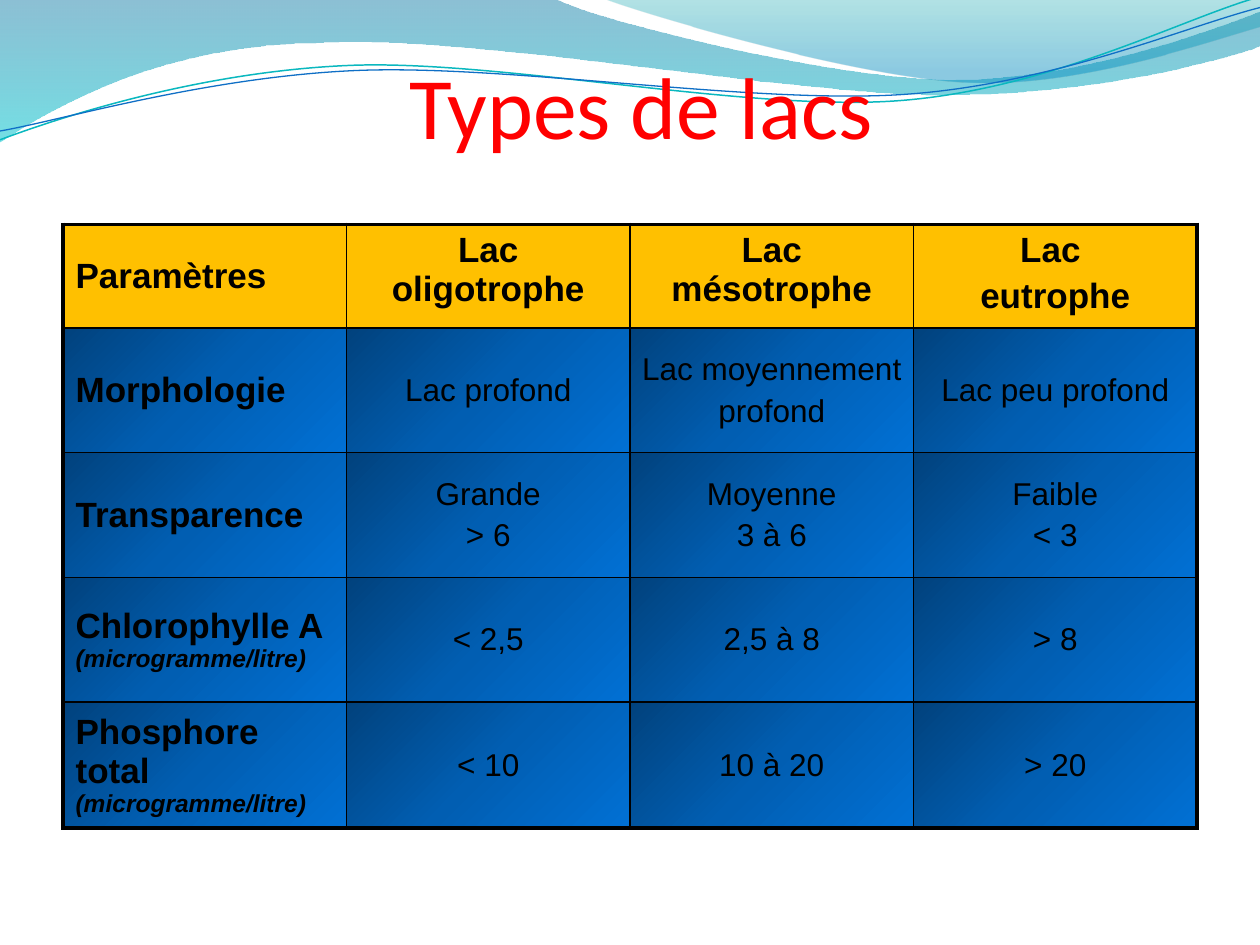
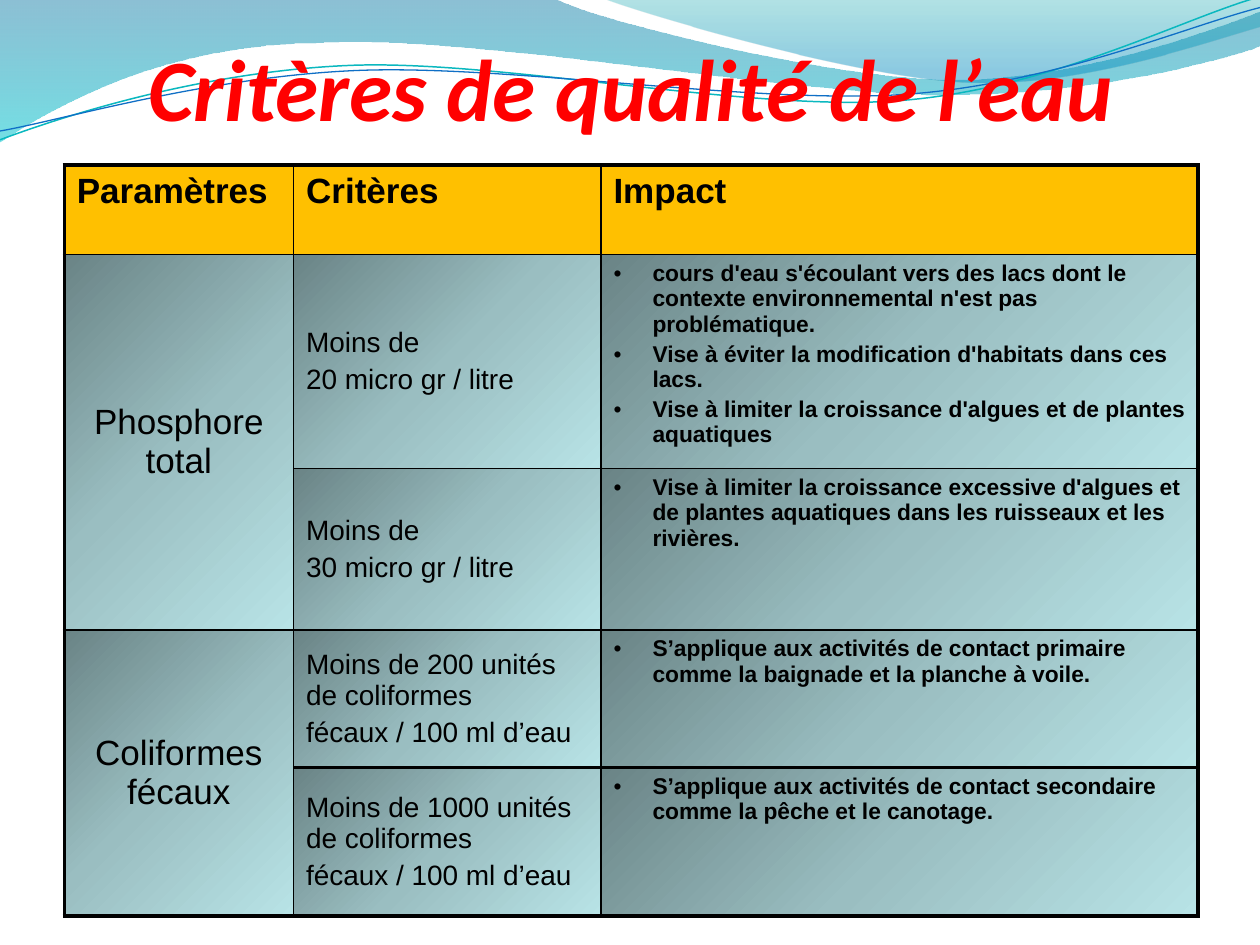
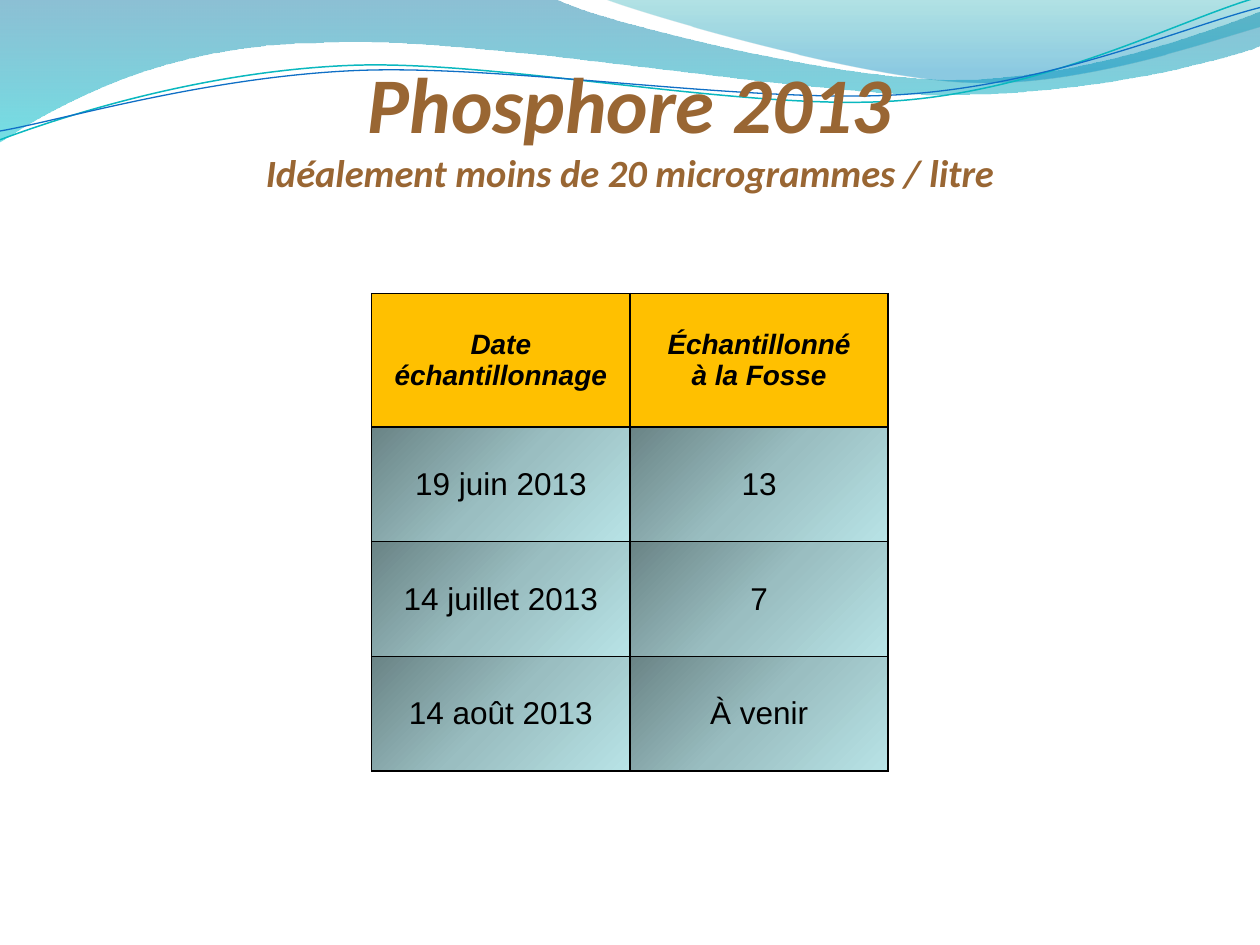
from lxml.etree import SubElement
from pptx import Presentation
from pptx.dml.color import RGBColor
from pptx.enum.text import MSO_ANCHOR, PP_ALIGN
from pptx.oxml.ns import qn
from pptx.util import Inches, Pt

BLACK, RED, BROWN, GOLD = "000000", "FF0000", "996633", "FFC000"
BLUE = [(0, "01427D", 100), (50, "015EB2", 100), (100, "0170D4", 100)]
TEAL = [(0, "6A8486", 100), (50, "9ABEC1", 100), (100, "B8E3E6", 100)]
LEFT, CENTER = PP_ALIGN.LEFT, PP_ALIGN.CENTER
TOP, MIDDLE = MSO_ANCHOR.TOP, MSO_ANCHOR.MIDDLE
THIN, THICK = 1, 2.25
UNIT = "(microgramme/litre)"
GRAIN = 1000


def rgb(color):
    return RGBColor.from_string(color)


def gradient(fill, props, stops, angle):
    fill.gradient()
    grad = props.find(qn("a:gradFill"))
    grad.find(qn("a:lin")).set("ang", str(angle * 60000))
    gs_list = grad.find(qn("a:gsLst"))
    gs_list.clear()
    for pos, color, alpha in stops:
        gs = SubElement(gs_list, qn("a:gs"), pos=str(pos * 1000))
        clr = SubElement(gs, qn("a:srgbClr"), val=color)
        if alpha < 100:
            SubElement(clr, qn("a:alpha"), val=str(alpha * 1000))


bands = [
    ([(0, -0.01), (4.4, -0.01), (4.76, 0.17, 6.64, 0.63, 7.58, 0.63),
      (8.53, 0.63, 9.58, 0.26, 10, 0.09), (10.01, 0.36),
      (9.83, 0.44, 8.7, 0.76, 7.46, 0.75), (6.22, 0.75, 3.82, 0.28, 2.57, 0.34),
      (1.29, 0.35, 0.46, 0.83, -0.01, 1.13)],
     [(0, "0074A1", 45), (100, "00C6CF", 55)], None),
    ([(4.79, -0.01), (5.09, 0.11, 6.82, 0.62, 7.69, 0.65),
      (8.56, 0.69, 9.61, 0.32, 10, 0.21), (10, 0)],
     [(0, "00A1A9", 30), (80, "008BBF", 45)], None),
    ([(0, 1.11), (0.48, 0.93, 1.58, 0.57, 2.77, 0.52),
      (3.95, 0.47, 5.93, 0.89, 7.13, 0.8), (8.33, 0.71, 9.38, 0.15, 9.98, -0.02)],
     None, ("0AB8BF", 0.85)),
    ([(0, 1.04), (0.47, 0.96, 1.64, 0.61, 2.83, 0.56),
      (4.03, 0.51, 5.97, 0.83, 7.17, 0.75), (8.36, 0.67, 9.41, 0.21, 10, 0.06)],
     None, ("0F6FC6", 0.75)),
]

lake_head = (20, True, False, CENTER, TOP, 0.1)
lake_label = (20, True, False, LEFT, MIDDLE, 0.1)
lake_value = (18, False, False, CENTER, MIDDLE, 0)
criteria_head = (20, True, False, LEFT, TOP, 0.1)
sample_head = (16, True, True, CENTER, MIDDLE, 0.1)
sample_value = (18, False, False, CENTER, MIDDLE, 0.1)

pages = [
    dict(
        title="Types de lacs", title_at=(0.59, 0, 9, 1.25), title_color=RED,
        title_sizes=[50], title_bold=False,
        at=(0.5, 1.78), cols=[2.25] * 4, rows=[0.47] + [0.99] * 4,
        head=[lake_label] + [lake_head] * 3, body=[lake_label] + [lake_value] * 3,
        fill=BLUE, edge=THICK, gap=0.2, merges=[], units=[3, 4], bullets=None, rule=None,
        cells=[
            ["Paramètres", "Lac oligotrophe", "Lac mésotrophe", "Lac \neutrophe"],
            ["Morphologie", "Lac profond", "Lac moyennement\nprofond", "Lac peu profond"],
            ["Transparence", "Grande\n> 6", "Moyenne\n3 à 6", "Faible\n< 3"],
            ["Chlorophylle A ", "< 2,5", "2,5 à 8", "> 8"],
            ["Phosphore total ", "< 10", "10 à 20", "> 20"],
        ]),
    dict(
        title="Critères de qualité de l’eau", title_at=(0.51, 0, 9, 1.1), title_color=RED,
        title_sizes=[50], title_bold=True,
        at=(0.51, 1.31), cols=[1.82, 2.44, 4.74], rows=[0.71, 1.7, 1.28, 1.09, 1.18],
        head=[criteria_head] * 3,
        body=[(20, False, False, CENTER, MIDDLE, 0.1), (16, False, False, LEFT, MIDDLE, 0.1),
              (13, True, False, LEFT, TOP, 0.1)],
        fill=TEAL, edge=THICK, gap=0.2, merges=[1, 3], units=[], bullets=2, rule=4,
        cells=[
            ["Paramètres", "Critères", "Impact"],
            ["Phosphore total", "Moins de\n20 micro gr / litre",
             "cours d'eau s'écoulant vers des lacs dont le contexte environnemental "
             "n'est pas problématique.\n"
             "Vise à éviter la modification d'habitats dans ces lacs.\n"
             "Vise à limiter la croissance d'algues et de plantes aquatiques"],
            ["", "Moins de\n30 micro gr / litre",
             "Vise à limiter la croissance excessive d'algues et de plantes aquatiques "
             "dans les ruisseaux et les rivières."],
            ["Coliformes fécaux", "Moins de 200 unités de coliformes\nfécaux / 100 ml d’eau",
             "S’applique aux activités de contact primaire comme la baignade "
             "et la planche à voile."],
            ["", "Moins de 1000 unités de coliformes\nfécaux / 100 ml d’eau",
             "S’applique aux activités de contact secondaire comme la pêche et le canotage."],
        ]),
    dict(
        title="Phosphore 2013\vIdéalement moins de 20 microgrammes / litre",
        title_at=(0.5, 0.3, 9, 1.25), title_color=BROWN,
        title_sizes=[45, 22], title_bold=True,
        at=(2.95, 2.33), cols=[2.05] * 2, rows=[1.06] + [0.91] * 3,
        head=[sample_head] * 2, body=[sample_value] * 2,
        fill=TEAL, edge=THIN, gap=0, merges=[], units=[], bullets=None, rule=None,
        cells=[
            ["Date échantillonnage", "Échantillonné\nà la Fosse"],
            ["19 juin 2013", "13"],
            ["14 juillet 2013", "7"],
            ["14 août 2013", "À venir"],
        ]),
]

prs = Presentation()
prs.slide_width, prs.slide_height = Inches(10), Inches(7.5)

for page in pages:
    s = prs.slides.add_slide(prs.slide_layouts[6])

    for (start, *segments), stops, stroke in bands:
        points = [(seg[k] * GRAIN, seg[k + 1] * GRAIN)
                  for seg in segments for k in range(0, len(seg), 2)]
        builder = s.shapes.build_freeform(start[0] * GRAIN, start[1] * GRAIN, Inches(1) / GRAIN)
        builder.add_line_segments(points, close=stroke is None)
        sp = builder.convert_to_shape()
        outline = next(sp._element.iter(qn("a:path")))
        steps = iter(outline.findall(qn("a:lnTo")))
        for seg in segments:
            step = next(steps)
            if len(seg) == 6:
                curve = SubElement(outline, qn("a:cubicBezTo"))
                outline.replace(step, curve)
                curve.append(step[0])
                for handle in (next(steps), next(steps)):
                    curve.append(handle[0])
                    outline.remove(handle)
        sp.shadow.inherit = False
        if stroke:
            sp.fill.background()
            sp.line.color.rgb = rgb(stroke[0])
            sp.line.width = Pt(stroke[1])
        else:
            gradient(sp.fill, sp._element.spPr, stops, 90)
            sp.line.fill.background()

    tf = s.shapes.add_textbox(*[Inches(v) for v in page["title_at"]]).text_frame
    tf.word_wrap = True
    tf.vertical_anchor = MSO_ANCHOR.BOTTOM
    tf.margin_left = tf.margin_right = tf.margin_bottom = 0
    p = tf.paragraphs[0]
    p.text = page["title"]
    p.alignment = CENTER
    for r, size in zip(p.runs, page["title_sizes"]):
        r.font.name, r.font.size = "Calibri", Pt(size)
        r.font.bold = r.font.italic = page["title_bold"]
        r.font.color.rgb = rgb(page["title_color"])

    cols, rows = page["cols"], page["rows"]
    box = [*page["at"], sum(cols), sum(rows)]
    table = s.shapes.add_table(len(rows), len(cols), *[Inches(v) for v in box]).table
    table.first_row = table.horz_banding = False
    for col, width in zip(table.columns, cols):
        col.width = Inches(width)
    for row, height in zip(table.rows, rows):
        row.height = Inches(height)
    for top in page["merges"]:
        table.cell(top, 0).merge(table.cell(top + 1, 0))

    for i, texts in enumerate(page["cells"]):
        styles = page["body"] if i else page["head"]
        for j, (text, style) in enumerate(zip(texts, styles)):
            size, bold, italic, align, anchor, margin = style
            cell = table.cell(i, j)
            cell.vertical_anchor = anchor
            cell.margin_left = cell.margin_right = Inches(margin)
            tc_pr = cell._tc.get_or_add_tcPr()
            bottom = i + cell.span_height
            heavy_rows = {0, len(rows)} | ({page["rule"]} if j else set())
            heavy = [("a:lnL", j == 0), ("a:lnR", j + 1 == len(cols)),
                     ("a:lnT", i in heavy_rows), ("a:lnB", bottom in heavy_rows)]
            for tag, is_heavy in heavy:
                width = page["edge"] if is_heavy else THIN
                ln = SubElement(tc_pr, qn(tag), w=str(Pt(width)))
                SubElement(SubElement(ln, qn("a:solidFill")), qn("a:srgbClr"), val=BLACK)
            if i:
                gradient(cell.fill, tc_pr, page["fill"], 45)
            else:
                cell.fill.solid()
                cell.fill.fore_color.rgb = rgb(GOLD)

            cell.text_frame.text = text
            for n, p in enumerate(cell.text_frame.paragraphs):
                p.alignment = align
                if n:
                    p.space_before = Pt(size * page["gap"])
                if i and j == page["bullets"]:
                    p_pr = p._p.get_or_add_pPr()
                    p_pr.set("marL", str(Inches(0.31)))
                    p_pr.set("indent", str(-Inches(0.31)))
                    SubElement(p_pr, qn("a:buFont"), typeface="Arial")
                    SubElement(p_pr, qn("a:buChar"), char="•")
                p.font.size = Pt(size)
                if j == 0 and i in page["units"]:
                    p.add_run().text = UNIT
                for r in p.runs:
                    is_unit = r.text == UNIT
                    r.font.name = "Arial"
                    r.font.size = Pt(14 if is_unit else size)
                    r.font.bold, r.font.italic = bold, italic or is_unit
                    r.font.color.rgb = rgb(BLACK)

prs.save("out.pptx")
